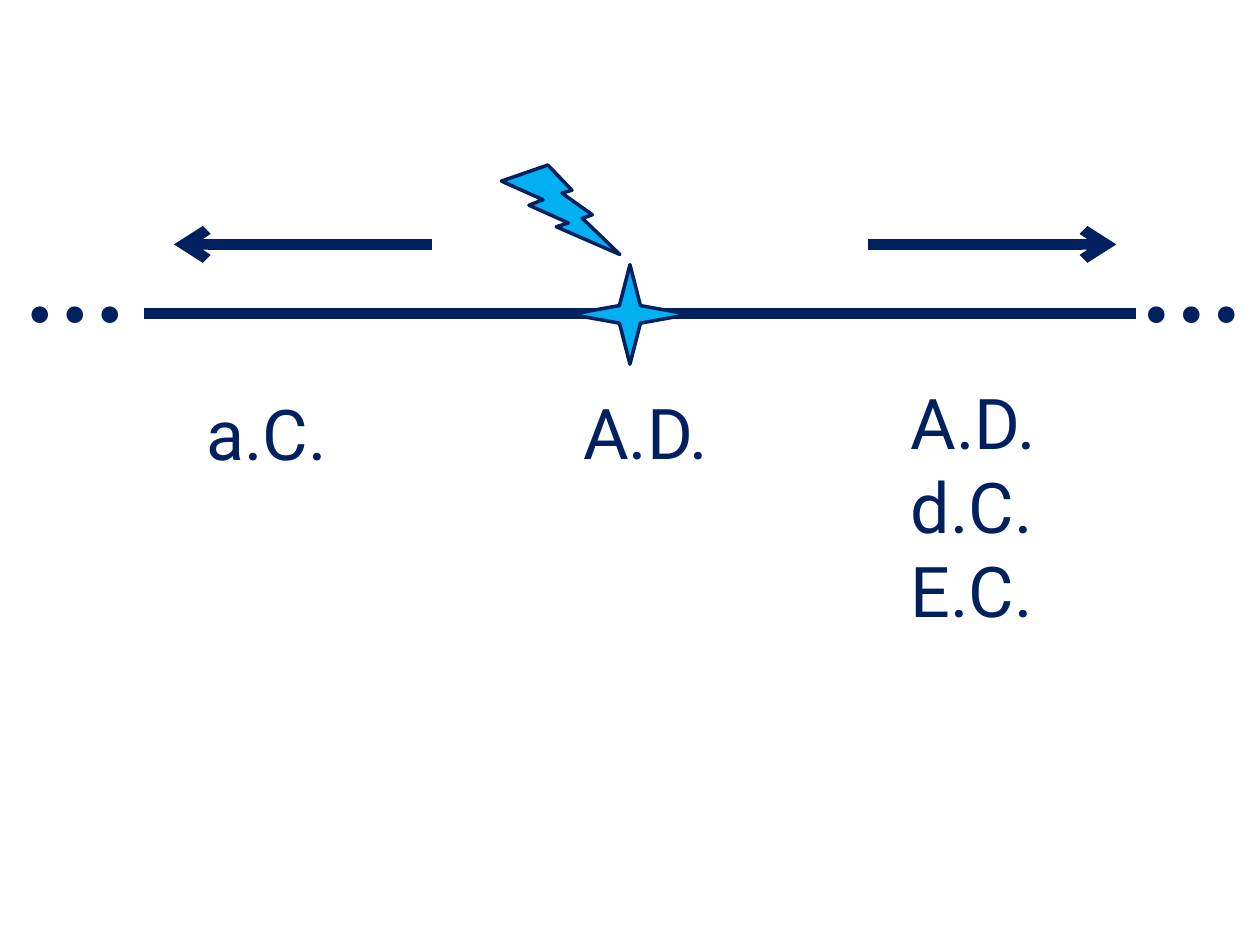
from lxml import etree
from pptx import Presentation
from pptx.dml.color import RGBColor
from pptx.enum import shapes as kinds
from pptx.oxml import ns
from pptx.util import Inches, Pt

NAVY = RGBColor(0x00, 0x20, 0x60)
SKY = RGBColor(0x00, 0xB0, 0xF0)

deck = Presentation()
deck.slide_width, deck.slide_height = Inches(10), Inches(7.5)
slide = deck.slides.add_slide(deck.slide_layouts[6])

# Time axis, then the arrows to the future and to the past
for start, end, y, arrow in (
    (1.14, 9.02, 2.49, False),
    (6.89, 8.86, 1.94, True),
    (3.43, 1.38, 1.94, True),
):
    line = slide.shapes.add_connector(
        kinds.MSO_CONNECTOR.STRAIGHT,
        Inches(start), Inches(y), Inches(end), Inches(y))
    line.line.color.rgb = NAVY
    line.line.width = Pt(6)
    props = line._element.spPr
    etree.SubElement(props, ns.qn("a:effectLst"))
    if arrow:
        stroke = line.line._get_or_add_ln()
        etree.SubElement(stroke, ns.qn("a:tailEnd"), type="arrow")

# Star at the turn of the era, struck by a lightning bolt
for kind, left, top, width, height in (
    (kinds.MSO_SHAPE.STAR_4_POINT, 4.53, 2.1, 0.94, 0.79),
    (kinds.MSO_SHAPE.LIGHTNING_BOLT, 3.98, 1.31, 0.94, 0.71),
):
    mark = slide.shapes.add_shape(
        kind, Inches(left), Inches(top), Inches(width), Inches(height))
    mark.shadow.inherit = False
    mark.fill.solid()
    mark.fill.fore_color.rgb = SKY
    mark.line.color.rgb = NAVY
    mark.line.width = Pt(2)

# Era names below the axis, dots at both of its ends
ERA = {"name": "Roboto", "size": Pt(40)}
DOTS = {"name": "Times New Roman", "size": Pt(80)}
for words, left, top, width, height, style in (
    (["a.C."], 1.54, 3.05, 1.5, 0.77, ERA),
    (["A.D."], 4.53, 3.04, 1.5, 0.77, ERA),
    (["A.D.", "d.C.", "E.C."], 7.13, 2.96, 1.5, 2.12, ERA),
    (["..."], 0.08, 1.39, 1.37, 1.45, DOTS),
    (["..."], 8.94, 1.39, 1.37, 1.45, DOTS),
):
    box = slide.shapes.add_textbox(
        Inches(left), Inches(top), Inches(width), Inches(height))
    frame = box.text_frame
    frame.word_wrap = True
    frame.text = "\n".join(words)
    for para in frame.paragraphs:
        font = para.runs[0].font
        font.color.rgb = NAVY
        for key, value in style.items():
            setattr(font, key, value)

deck.save("out.pptx")
